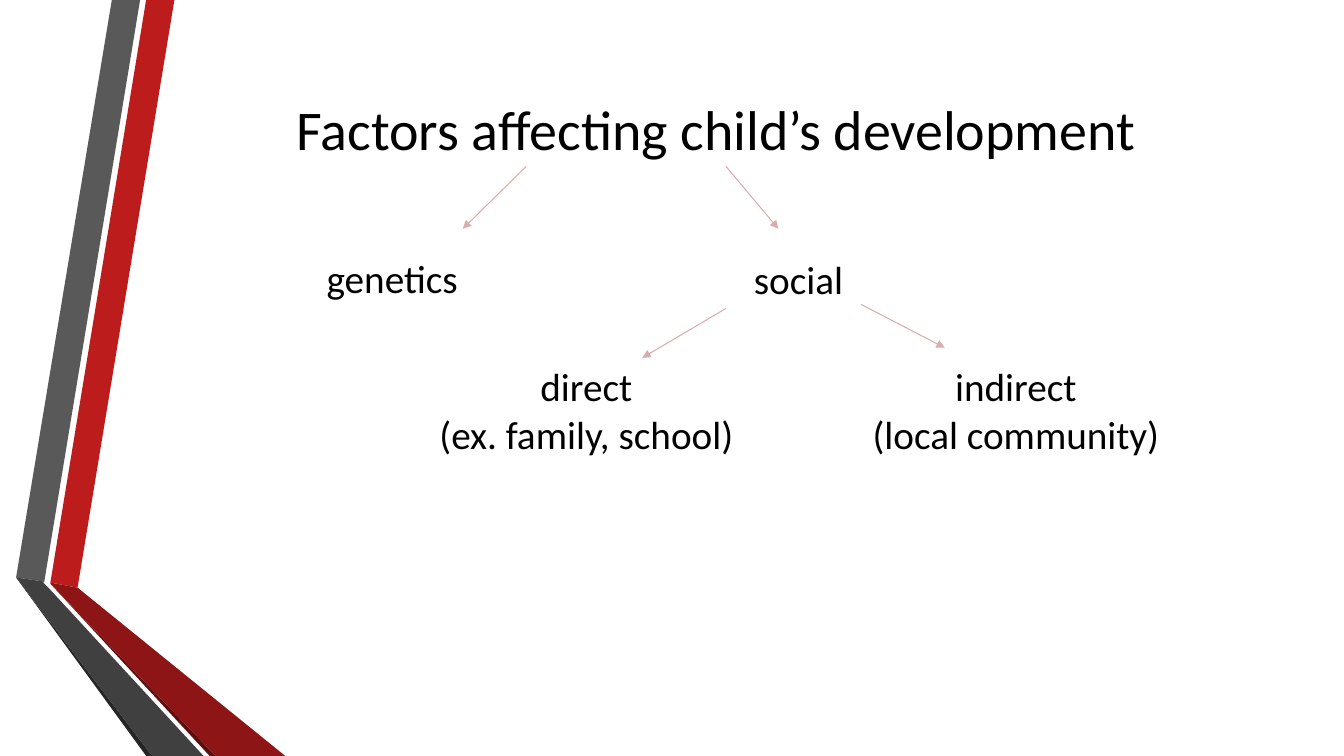
import pptx
import pptx.util
import pptx.dml.color
import pptx.enum.shapes
import pptx.enum.text
import pptx.oxml.ns
from lxml import etree

Inches = pptx.util.Inches
Anchor = pptx.enum.text.MSO_ANCHOR
AutoSize = pptx.enum.text.MSO_AUTO_SIZE

FONT = "Calibri"
COLORS = {
    "text": "000000", "arrow": "DAACAC",
    "red": "BC1C1C", "red_shade": "8D1515", "red_edge": "5E0E0E",
    "gray": "595959", "gray_shade": "404040", "gray_edge": "262626",
}

# Content: box is left, top, width, height
TITLE = ("Factors affecting child’s development", (1.62, 0.75, 10.96, 1.05))
FACTORS = [
    (["genetics"], (2.56, 2.47, 2.66, 0.57)),
    (["social"], (6.47, 2.48, 2.9, 0.57)),
    (["direct", "(ex. family, school)"], (4.21, 3.55, 3.21, 1.04)),
    (["indirect", "(local community)"], (8.47, 3.55, 3.21, 1.04)),
]
ARROWS = [
    ((5.22, 1.65), (4.59, 2.27)),
    ((7.2, 1.65), (7.72, 2.27)),
    ((8.54, 3.02), (9.37, 3.45)),
    ((7.2, 3.06), (6.37, 3.55)),
]
RIBBONS = [
    ("red", [(0.5, 5.78), (0.77, 5.83), (1.73, 0), (1.45, 0)]),
    ("gray", [(1.39, 0), (1.11, 0), (0.16, 5.73), (0.44, 5.77)]),
    ("gray_edge", [(0.16, 5.73), (1.45, 7.5), (1.51, 7.5)]),
    ("red_edge", [(0.5, 5.79), (2.08, 7.5), (2.14, 7.5)]),
    ("red_shade", [(0.5, 5.79), (2.14, 7.5), (2.83, 7.5), (0.77, 5.83), (0.5, 5.78)]),
    ("gray_shade", [(2.02, 7.5), (0.48, 5.83), (0.43, 5.78), (0.44, 5.77),
                    (0.16, 5.73), (1.51, 7.5)]),
]


def color(name):
    return pptx.dml.color.RGBColor.from_string(COLORS[name])


def write_lines(text_frame, lines, size):
    text_frame.word_wrap = True
    for index, line in enumerate(lines):
        paragraph = text_frame.add_paragraph() if index else text_frame.paragraphs[0]
        paragraph.alignment = pptx.enum.text.PP_ALIGN.CENTER
        run = paragraph.add_run()
        run.text = line
        run.font.name = FONT
        run.font.size = pptx.util.Pt(size)
        run.font.color.rgb = color("text")


def add_ribbon(slide, fill, points):
    corners = [(Inches(x), Inches(y)) for x, y in points]
    builder = slide.shapes.build_freeform(*corners[0])
    builder.add_line_segments(corners[1:], close=True)
    shape = builder.convert_to_shape()
    shape.shadow.inherit = False
    shape.fill.solid()
    shape.fill.fore_color.rgb = color(fill)
    shape.line.fill.background()


def add_arrow(slide, start, end):
    connector = slide.shapes.add_connector(
        pptx.enum.shapes.MSO_CONNECTOR.STRAIGHT, *map(Inches, start + end))
    connector.line.color.rgb = color("arrow")
    connector.line.width = pptx.util.Pt(0.75)
    qn = pptx.oxml.ns.qn
    properties = connector.line._get_or_add_ln()
    etree.SubElement(properties, qn("a:tailEnd"), type="triangle")
    etree.SubElement(properties.getparent(), qn("a:effectLst"))


def main():
    presentation = pptx.Presentation()
    presentation.slide_width = Inches(13.33)
    presentation.slide_height = Inches(7.5)
    slide = presentation.slides.add_slide(presentation.slide_layouts[5])

    # Folded ribbons on the left
    for fill, points in RIBBONS:
        add_ribbon(slide, fill, points)

    # Title
    text, box = TITLE
    title = slide.shapes.title
    title.left, title.top, title.width, title.height = map(Inches, box)
    title.text_frame.auto_size = AutoSize.NONE
    title.text_frame.vertical_anchor = Anchor.MIDDLE
    write_lines(title.text_frame, [text], 40)

    # Tree of factors
    for lines, box in FACTORS:
        text_box = slide.shapes.add_textbox(*map(Inches, box))
        text_box.text_frame.auto_size = AutoSize.SHAPE_TO_FIT_TEXT
        write_lines(text_box.text_frame, lines, 28)
    for start, end in ARROWS:
        add_arrow(slide, start, end)

    presentation.save("out.pptx")


if __name__ == "__main__":
    main()
